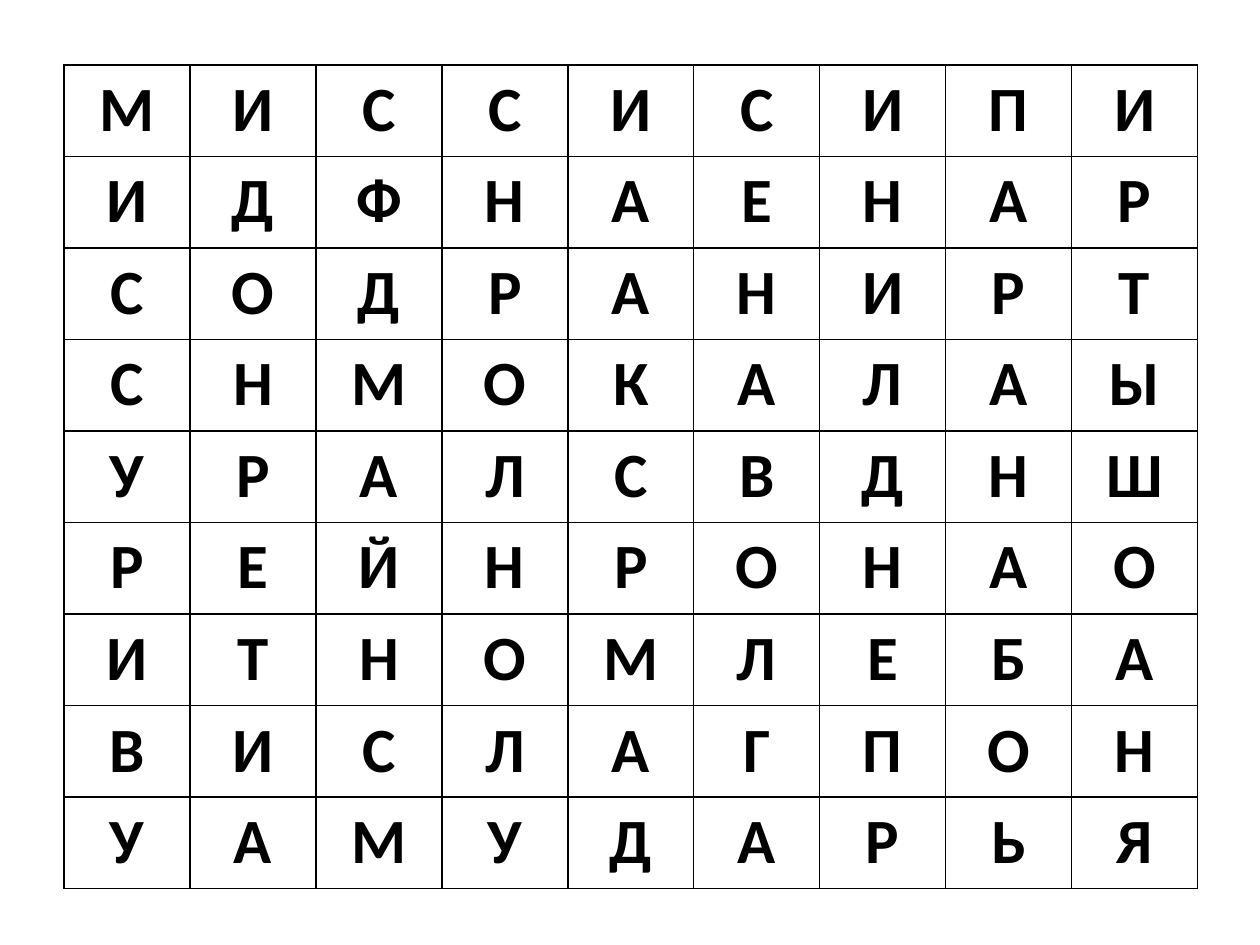
from lxml.etree import SubElement
from pptx import Presentation
from pptx.dml.color import RGBColor
from pptx.enum.text import PP_ALIGN
from pptx.oxml.ns import qn
from pptx.util import Pt

PX = 914400 // 126
COLORS = {"ink": "000000"}
LETTERS = [
    "МИССИСИПИ",
    "ИДФНАЕНАР",
    "СОДРАНИРТ",
    "СНМОКАЛАЫ",
    "УРАЛСВДНШ",
    "РЕЙНРОНАО",
    "ИТНОМЛЕБА",
    "ВИСЛАГПОН",
    "УАМУДАРЬЯ",
]


def px(n):
    return n * PX


def add_borders(cell):
    tcPr = cell._tc.get_or_add_tcPr()
    for side in ("a:lnL", "a:lnR", "a:lnT", "a:lnB"):
        ln = SubElement(tcPr, qn(side), w=str(Pt(1)))
        fill = SubElement(ln, qn("a:solidFill"))
        SubElement(fill, qn("a:srgbClr"), val=COLORS["ink"])


def fill_cell(cell, letter):
    add_borders(cell)
    cell.fill.background()
    p = cell.text_frame.paragraphs[0]
    p.text = letter
    p.alignment = PP_ALIGN.CENTER
    p.font.name = "Calibri"
    p.font.size = Pt(36)
    p.font.bold = True
    p.font.color.rgb = RGBColor.from_string(COLORS["ink"])


def add_letter_grid(s, rows, left, top, width, height):
    frame = s.shapes.add_table(len(rows), len(rows[0]), px(left), px(top), px(width), px(height))
    table = frame.table
    table.first_row = False
    table.horz_banding = False
    for r, word in enumerate(rows):
        for c, letter in enumerate(word):
            fill_cell(table.cell(r, c), letter)


def main():
    prs = Presentation()
    prs.slide_width = px(1260)
    prs.slide_height = px(945)
    s = prs.slides.add_slide(prs.slide_layouts[6])
    add_letter_grid(s, LETTERS, 64, 65, 1134, 824)
    prs.save("out.pptx")


if __name__ == "__main__":
    main()
